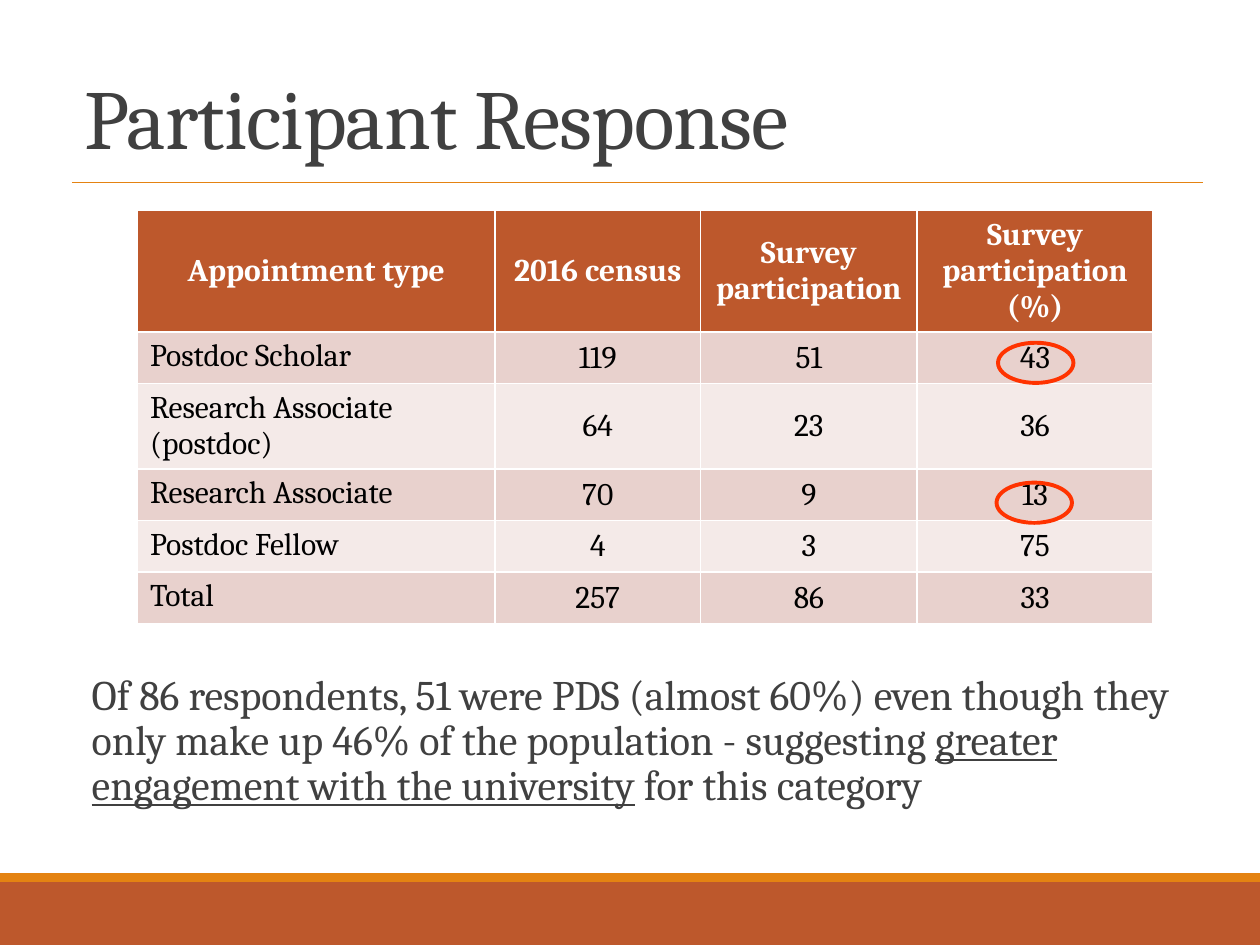
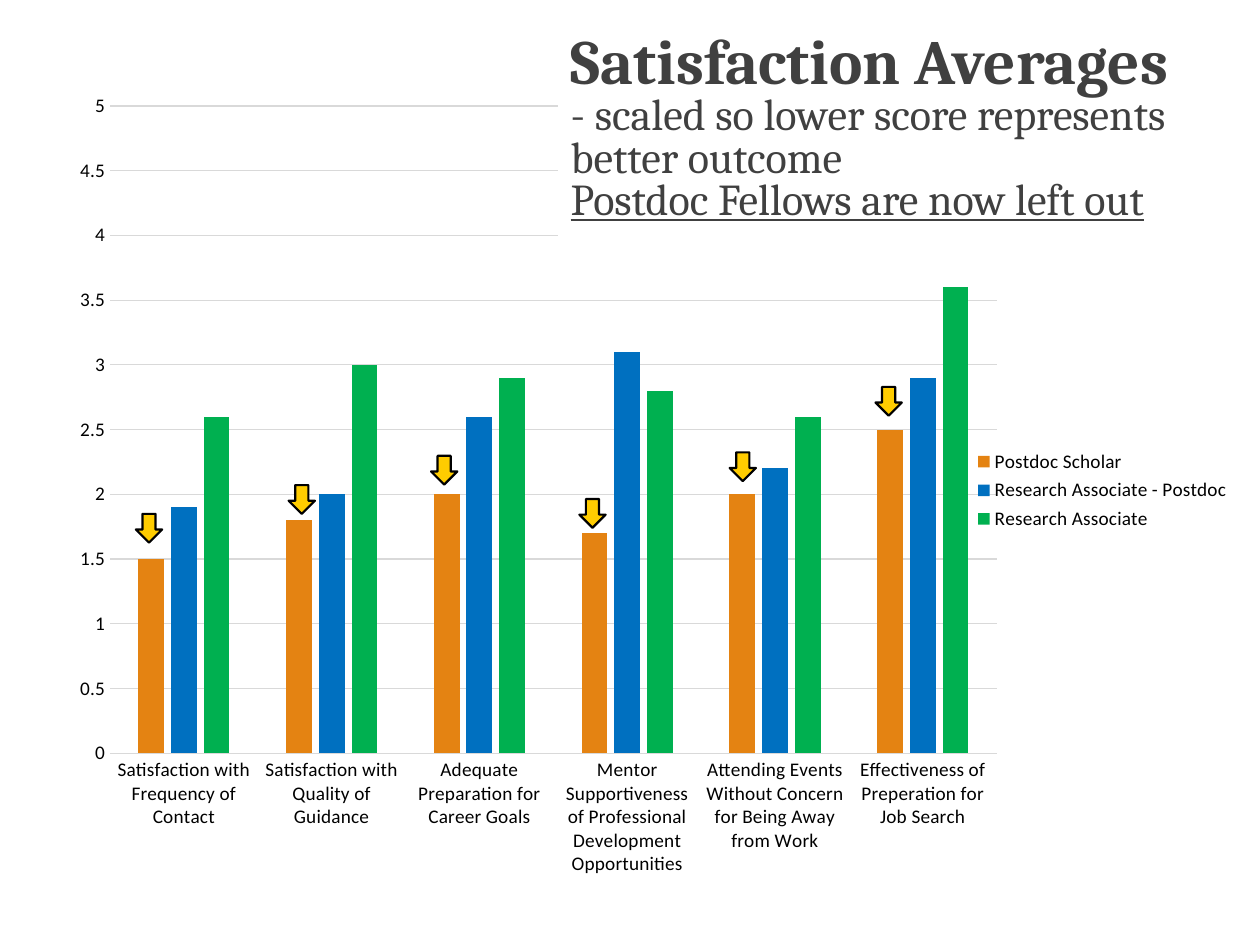
from lxml import etree
from pptx import Presentation
from pptx.chart.data import CategoryChartData
from pptx.dml.color import RGBColor
from pptx.enum.chart import XL_CHART_TYPE as ChartType, XL_LEGEND_POSITION as LegendPosition
from pptx.enum.chart import XL_TICK_MARK as TickMark
from pptx.enum.shapes import MSO_CONNECTOR as Connector, MSO_SHAPE as Shape
from pptx.enum.text import MSO_ANCHOR as Anchor, MSO_AUTO_SIZE as AutoSize, PP_ALIGN as Align
from pptx.oxml.ns import qn
from pptx.util import Cm, Pt

COLORS = {
    "text": "404040", "black": "000000", "white": "FFFFFF",
    "rust": "BD582C", "orange": "E48312", "blue": "0070C0", "green": "00B050",
    "row_dark": "E8D1CD", "row_light": "F4EAE8",
    "grid": "D9D9D9", "ring": "FF3300", "arrow": "FFCC00",
}
TITLE_ONLY = 5


def color(name):
    return RGBColor.from_string(COLORS[name])


def lengths(values):
    return [Cm(value) for value in values]


class Deck:
    """Holds the shared style and the slide being built."""

    serif, sans = "Cambria", "Calibri"

    def __init__(self):
        self.presentation = Presentation()
        self.presentation.slide_width, self.presentation.slide_height = lengths((25.4, 19.05))
        self.slide = None

    def new_slide(self):
        layout = self.presentation.slide_layouts[TITLE_ONLY]
        self.slide = self.presentation.slides.add_slide(layout)

    def style_run(self, run, size, ink="text", bold=False, underline=False):
        font = run.font
        font.name, font.size = self.serif, Pt(size)
        font.bold, font.underline = bold, underline
        font.color.rgb = color(ink)

    def fill_frame(self, frame, paragraphs, spacing):
        """Each paragraph is a list of (text, run style) pairs."""
        frame.word_wrap, frame.auto_size = True, AutoSize.NONE
        for index, pieces in enumerate(paragraphs):
            paragraph = frame.add_paragraph() if index else frame.paragraphs[0]
            paragraph.alignment, paragraph.line_spacing = Align.LEFT, spacing
            for text, style in pieces:
                run = paragraph.add_run()
                run.text = text
                self.style_run(run, **style)

    def title(self, box, paragraphs, spacing, anchor, fill=None, tracking=0):
        title = self.slide.shapes.title
        title.left, title.top, title.width, title.height = lengths(box)
        self.fill_frame(title.text_frame, paragraphs, spacing)
        title.text_frame.vertical_anchor = anchor
        if fill:
            title.fill.solid()
            title.fill.fore_color.rgb = color(fill)
        if tracking:
            for paragraph in title.text_frame.paragraphs:
                for run in paragraph.runs:
                    run.font._element.set("spc", str(tracking))
        # Bring the title in front of what is already on the slide
        self.slide.shapes._spTree.append(title._element)

    def text(self, box, paragraphs, spacing):
        frame = self.slide.shapes.add_textbox(*lengths(box)).text_frame
        frame.margin_right = 0
        self.fill_frame(frame, paragraphs, spacing)
        for paragraph in frame.paragraphs:
            paragraph.space_before, paragraph.space_after = Pt(12), Pt(2)

    def shape(self, kind, box, fill=None, line=None, weight=1):
        shape = self.slide.shapes.add_shape(kind, *lengths(box))
        shape.shadow.inherit = False
        if fill:
            shape.fill.solid()
            shape.fill.fore_color.rgb = color(fill)
        else:
            shape.fill.background()
        if line:
            shape.line.color.rgb = color(line)
            shape.line.width = Pt(weight)
        else:
            shape.line.fill.background()

    def rule(self, start, end, ink):
        line = self.slide.shapes.add_connector(Connector.STRAIGHT, *lengths(start + end))
        line.line.color.rgb = color(ink)
        line.line.width = Pt(1)
        etree.SubElement(line._element.spPr, qn("a:effectLst"))

    def bands(self):
        self.shape(Shape.RECTANGLE, (0, 17.78, 25.4, 1.27), "rust")
        self.shape(Shape.RECTANGLE, (0, 17.6, 25.4, 0.18), "orange")
        self.rule((1.45, 3.68), (24.26, 3.68), "orange")

    def table(self, box, widths, row_height, rows):
        table = self.slide.shapes.add_table(len(rows), len(widths), *lengths(box)).table
        for column, width in zip(table.columns, widths):
            column.width = Cm(width)
        for row_index, values in enumerate(rows):
            table.rows[row_index].height = Cm(row_height)
            header = row_index == 0
            fill = "rust" if header else ("row_light", "row_dark")[row_index % 2]
            for column_index, value in enumerate(values):
                label = not header and column_index == 0
                cell = table.cell(row_index, column_index)
                cell.fill.solid()
                cell.fill.fore_color.rgb = color(fill)
                cell.vertical_anchor = Anchor.TOP if label else Anchor.MIDDLE
                paragraph = cell.text_frame.paragraphs[0]
                paragraph.text = value
                paragraph.alignment = Align.LEFT if label else Align.CENTER
                self.style_run(paragraph.runs[0], 18, "white" if header else "black", header)

    def column_chart(self, box, categories, series, maximum, step, plot_area):
        data = CategoryChartData()
        data.categories = categories
        for name, values, _ in series:
            data.add_series(name, values)
        chart = self.slide.shapes.add_chart(
            ChartType.COLUMN_CLUSTERED, *lengths(box), data).chart
        chart.has_title = False
        chart.font.name, chart.font.size = self.sans, Pt(11)
        chart.font.color.rgb = color("black")
        chart.has_legend = True
        chart.legend.position = LegendPosition.RIGHT
        chart.legend.include_in_layout = False

        plot = chart.plots[0]
        plot.gap_width, plot.overlap, plot.vary_by_categories = 219, -27, False
        for columns, (_, _, fill) in zip(plot.series, series):
            columns.format.fill.solid()
            columns.format.fill.fore_color.rgb = color(fill)

        category_axis, value_axis = chart.category_axis, chart.value_axis
        for axis in (category_axis, value_axis):
            axis.major_tick_mark = axis.minor_tick_mark = TickMark.NONE
        value_axis.minimum_scale, value_axis.maximum_scale = 0, maximum
        value_axis.major_unit = step
        value_axis.format.line.fill.background()
        for line in (category_axis.format.line, value_axis.major_gridlines.format.line):
            line.color.rgb = color("grid")
            line.width = Pt(0.75)
        self.place_plot(chart, plot_area)

    def place_plot(self, chart, plot_area):
        area = chart._chartSpace.find(".//" + qn("c:plotArea"))
        for layout in area.findall(qn("c:layout")):
            area.remove(layout)
        layout = etree.Element(qn("c:layout"))
        manual = etree.SubElement(layout, qn("c:manualLayout"))
        settings = [("layoutTarget", "inner"), ("xMode", "edge"), ("yMode", "edge")]
        for tag, value in settings + list(zip("xywh", plot_area)):
            etree.SubElement(manual, qn("c:" + tag)).set("val", str(value))
        area.insert(0, layout)


def participant_response(deck):
    deck.new_slide()
    deck.bands()
    deck.title((1.45, 0.64, 22.81, 2.84), [[("Participant Response", {"size": 48})]],
               0.85, Anchor.BOTTOM, tracking=-50)

    # Conclusion
    plain = {"size": 24}
    deck.text((1.6, 13.46, 22.81, 3.3), [[
        ("Of 86 respondents, 51 were PDS (almost 60%) even though they only make up 46% "
         "of the population - suggesting ", plain),
        ("greater engagement with the university", {"size": 24, "underline": True}),
        (" for this category", plain),
    ]], 0.9)

    # Participation by appointment type
    deck.table((2.77, 4.24, 20.47, 6.24), (7.21, 4.14, 4.37, 4.75), 1.04, [
        ("Appointment type", "2016 census", "Survey participation", "Survey participation (%)"),
        ("Postdoc Scholar", "119", "51", "43"),
        ("Research Associate (postdoc)", "64", "23", "36"),
        ("Research Associate", "70", "9", "13"),
        ("Postdoc Fellow", "4", "3", "75"),
        ("Total", "257", "86", "33"),
    ])

    # Rings around the compared rates
    for left, top in ((20.12, 6.91), (20.09, 9.73)):
        deck.shape(Shape.OVAL, (left, top, 1.52, 0.81), line="ring", weight=2.25)


def satisfaction_averages(deck):
    deck.new_slide()
    categories = (
        "Satisfaction with Frequency of Contact",
        "Satisfaction with Quality of Guidance",
        "Adequate Preparation for Career Goals",
        "Mentor Supportiveness of Professional Development Opportunities",
        "Attending Events Without Concern for Being Away from Work",
        "Effectiveness of Preperation for Job Search",
    )
    series = (
        ("Postdoc Scholar", (1.5, 1.8, 2, 1.7, 2, 2.5), "orange"),
        ("Research Associate - Postdoc", (1.9, 2, 2.6, 3.1, 2.2, 2.9), "blue"),
        ("Research Associate", (2.6, 3, 2.9, 2.8, 2.6, 3.6), "green"),
    )
    deck.column_chart((1.14, 1.73, 23.93, 16.31), categories, series,
                      maximum=5, step=0.5, plot_area=(0.045, 0.025, 0.747, 0.8))

    # Heading over the empty corner of the chart
    deck.title((11.25, 0.61, 13.61, 4.27), [
        [("Satisfaction Averages", {"size": 36, "bold": True})],
        [("- scaled so lower score represents better outcome", {"size": 25.2})],
        [("Postdoc Fellows are now left out", {"size": 25.2, "underline": True})],
    ], 0.8, Anchor.TOP, fill="white")

    # Arrows over the Postdoc Scholar columns
    arrow_places = ((2.74, 10.36), (5.82, 9.78), (8.69, 9.19),
                    (11.68, 10.06), (14.71, 9.12), (17.65, 7.8))
    for left, top in arrow_places:
        deck.shape(Shape.DOWN_ARROW, (left, top, 0.53, 0.58), "arrow", "black", 1.25)


def main():
    deck = Deck()
    participant_response(deck)
    satisfaction_averages(deck)
    deck.presentation.save("out.pptx")


if __name__ == "__main__":
    main()
